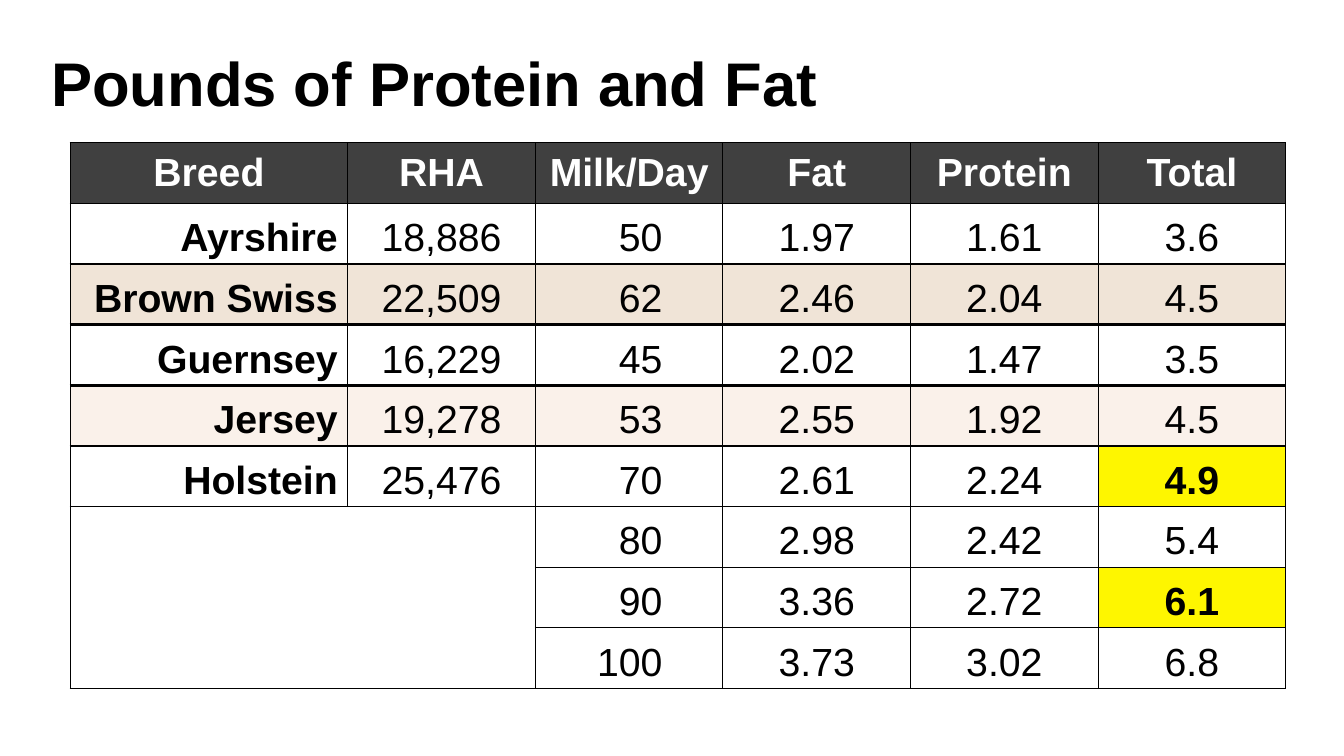
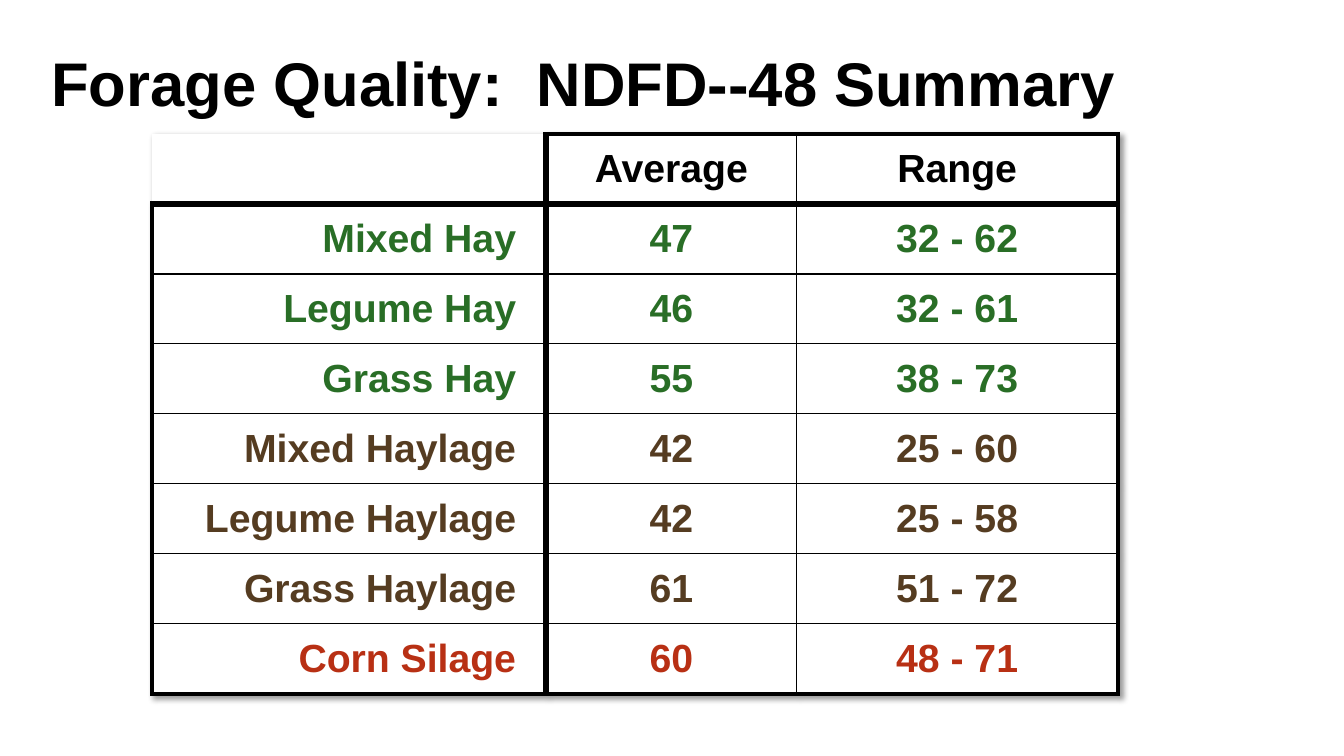
from dataclasses import dataclass

import lxml.etree
import pptx
import pptx.dml.color
import pptx.enum.text
import pptx.oxml
import pptx.oxml.ns
import pptx.util

Pt = pptx.util.Pt
LEFT = pptx.enum.text.PP_ALIGN.LEFT
MID = pptx.enum.text.PP_ALIGN.CENTER
RIGHT = pptx.enum.text.PP_ALIGN.RIGHT
CENTER = pptx.enum.text.MSO_ANCHOR.MIDDLE
BASE = pptx.enum.text.MSO_ANCHOR.BOTTOM
NS = pptx.oxml.ns.nsdecls("a")


@dataclass(frozen=True)
class Theme:
    font: str = "Arial"
    black: str = "000000"
    white: str = "FFFFFF"
    slate: str = "404040"
    tan: str = "F0E4D7"
    cream: str = "FAF1EA"
    yellow: str = "FEF600"
    green: str = "296E26"
    brown: str = "553C21"
    red: str = "B83014"
    head: int = 44
    body: int = 28


class Deck:
    def __init__(self, theme):
        self.theme = theme
        self.file = pptx.Presentation()
        self.file.slide_width, self.file.slide_height = Pt(960), Pt(540)
        self.slide = None

    def style(self, frame, size, color, bold, align):
        for para in frame.paragraphs:
            para.alignment = align
            for run in para.runs:
                run.font.name = self.theme.font
                run.font.size = Pt(size)
                run.font.bold = bold
                run.font.color.rgb = pptx.dml.color.RGBColor.from_string(color)

    def page(self, title):
        """Start a slide with its title."""
        self.slide = self.file.slides.add_slide(self.file.slide_layouts[6])
        box = self.slide.shapes.add_textbox(Pt(27.4), Pt(22.9), Pt(927), Pt(90))
        frame = box.text_frame
        frame.word_wrap = True
        frame.margin_left = frame.margin_right = frame.margin_top = Pt(9.3)
        frame.text = title
        self.style(frame, self.theme.head, self.theme.black, True, LEFT)

    def grid(self, left, top, cols, high, rows, across, down):
        """Add a table; across and down give the widths of its rules."""
        frame = self.slide.shapes.add_table(
            len(rows), len(cols), Pt(left), Pt(top),
            Pt(sum(cols)), Pt(high * len(rows)))
        table = frame.table
        table.first_row = table.horz_banding = False
        for col, wide in zip(table.columns, cols):
            col.width = Pt(wide)
        for r, row in enumerate(rows):
            table.rows[r].height = Pt(high)
            for c, text in enumerate(row):
                cell = table.cell(r, c)
                cell.text_frame.text = text
                self.edge(cell, down[c], down[c + 1], across[r], across[r + 1])
        return table

    def edge(self, cell, *widths):
        """Set the left, right, top and bottom rules; 0 means none."""
        props = cell._tc.get_or_add_tcPr()
        for spot, (side, wide) in enumerate(zip("LRTB", widths)):
            for old in props.findall(pptx.oxml.ns.qn(f"a:ln{side}")):
                props.remove(old)
            ink = (f'<a:solidFill><a:srgbClr val="{self.theme.black}"/></a:solidFill>'
                   if wide else "<a:noFill/>")
            props.insert(spot, pptx.oxml.parse_xml(
                f'<a:ln{side} {NS} w="{Pt(wide)}">{ink}</a:ln{side}>'))

    def cell(self, cell, fill, color, bold=True, align=MID, anchor=CENTER,
             right=7.2, pad=3.6):
        cell.fill.solid()
        cell.fill.fore_color.rgb = pptx.dml.color.RGBColor.from_string(fill)
        cell.vertical_anchor = anchor
        cell.margin_left, cell.margin_right = Pt(7.2), Pt(right)
        cell.margin_top = cell.margin_bottom = Pt(pad)
        self.style(cell.text_frame, self.theme.body, color, bold, align)

    def shade(self, table):
        """Give the table a soft shadow."""
        table._tbl.tblPr.insert(0, pptx.oxml.parse_xml(
            f'<a:effectLst {NS}><a:outerShdw blurRad="{Pt(4)}" dist="{Pt(3)}" '
            f'dir="2700000" algn="tl" rotWithShape="0"><a:srgbClr val="{self.theme.black}">'
            '<a:alpha val="40000"/></a:srgbClr></a:outerShdw></a:effectLst>'))


def breeds(deck):
    theme = deck.theme
    rows = [
        ("Breed", "RHA", "Milk/Day", "Fat", "Protein", "Total"),
        ("Ayrshire", "18,886", "50", "1.97", "1.61", "3.6"),
        ("Brown Swiss", "22,509", "62", "2.46", "2.04", "4.5"),
        ("Guernsey", "16,229", "45", "2.02", "1.47", "3.5"),
        ("Jersey", "19,278", "53", "2.55", "1.92", "4.5"),
        ("Holstein", "25,476", "70", "2.61", "2.24", "4.9"),
        ("", "", "80", "2.98", "2.42", "5.4"),
        ("", "", "90", "3.36", "2.72", "6.1"),
        ("", "", "100", "3.73", "3.02", "6.8"),
    ]
    tints = {2: theme.tan, 4: theme.cream}
    marks = {(5, 5), (7, 5)}
    deck.page("Pounds of Protein and Fat")
    table = deck.grid(50, 102, [198.4] + [134] * 5, 43.33, rows,
                      [0.75] * 2 + [2.25] * 4 + [0.75] * 4, [0.75] * 7)
    for r, row in enumerate(rows):
        for c in range(len(row)):
            cell = table.cell(r, c)
            if r == 0:
                deck.cell(cell, theme.slate, theme.white, pad=2.9)
                continue
            mark = (r, c) in marks
            fill = theme.yellow if mark else tints.get(r, theme.white)
            deck.cell(cell, fill, theme.black, mark or c == 0,
                      RIGHT if c in (0, 2) else MID, BASE,
                      43.2 if c == 2 else 7.2, 2.9)
    table.cell(6, 0).merge(table.cell(8, 1))


def forage(deck):
    theme = deck.theme
    rows = [
        ("", "Average", "Range"),
        ("Mixed Hay", "47", "32 - 62"),
        ("Legume Hay", "46", "32 - 61"),
        ("Grass Hay", "55", "38 - 73"),
        ("Mixed Haylage", "42", "25 - 60"),
        ("Legume Haylage", "42", "25 - 58"),
        ("Grass Haylage", "61", "51 - 72"),
        ("Corn Silage", "60", "48 - 71"),
    ]
    inks = [theme.black] + [theme.green] * 3 + [theme.brown] * 3 + [theme.red]
    deck.page("Forage Quality:  NDFD--48 Summary")
    table = deck.grid(108.6, 95.7, [281.6, 178.6, 229.8], 50, rows,
                      [3, 4.5] + [1] * 6 + [3], [3, 4.5, 1, 3])
    for r, ink in enumerate(inks):
        for c in range(3):
            deck.cell(table.cell(r, c), theme.white, ink,
                      align=MID if c else RIGHT, right=7.2 if c else 21.6)
    deck.edge(table.cell(0, 0), 0, 4.5, 0, 4.5)
    deck.shade(table)


def main():
    deck = Deck(Theme())
    breeds(deck)
    forage(deck)
    deck.file.save("out.pptx")


if __name__ == "__main__":
    main()
